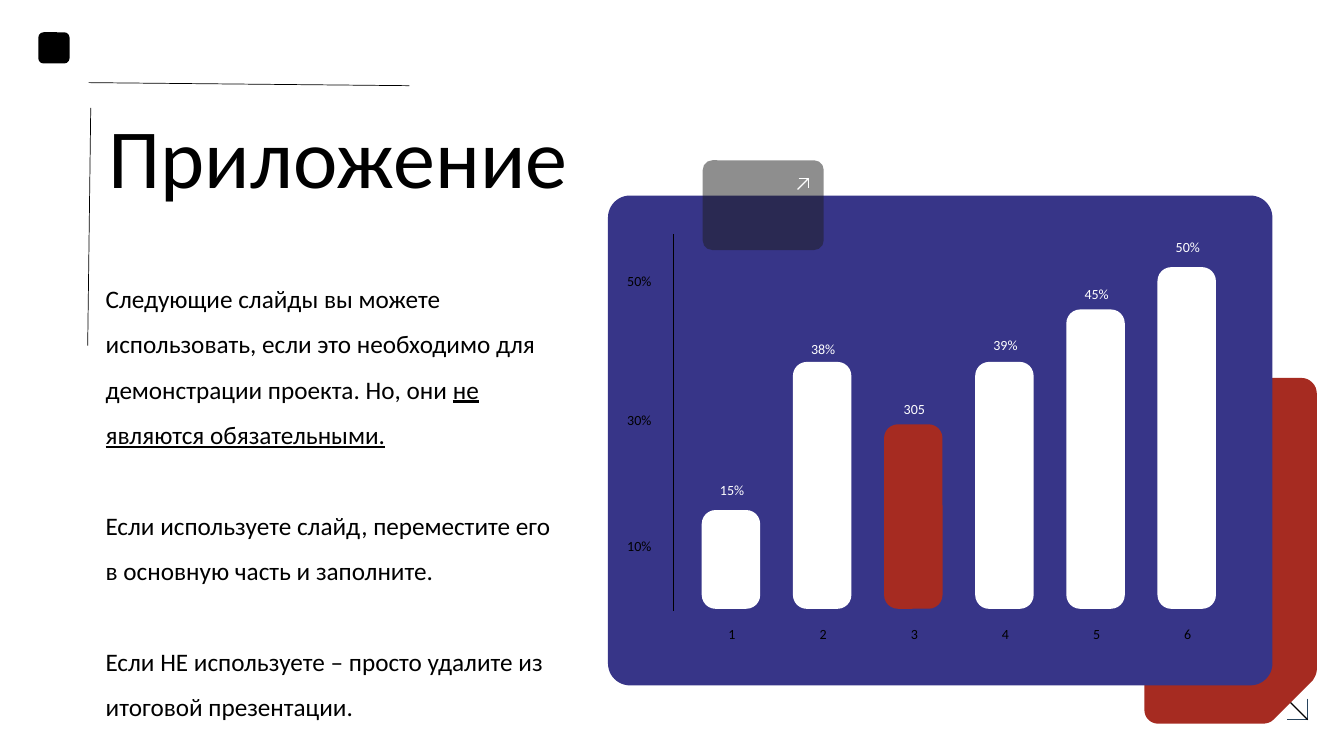
from lxml import etree
from pptx import Presentation
from pptx import util as u
from pptx.dml.color import RGBColor
from pptx.enum import shapes, text
from pptx.oxml.ns import qn

CELL = 0.1  # inches: the slide is a grid of 133.3 columns by 75 rows
BLACK, WHITE, RED, BLUE = "000000", "FFFFFF", "A62B21", "373588"


def grid(*cells):
    return [u.Inches(cell * CELL) for cell in cells]


def rgb(value):
    return RGBColor.from_string(value)


def flatten(outline, steps=8):
    """Turn (x, y) points and six-number cubic curves into plain points."""
    points = []
    for part in outline:
        if len(part) == 2:
            points.append(part)
            continue
        knots = [points[-1], part[:2], part[2:4], part[4:]]
        for step in range(1, steps + 1):
            t = step / steps
            weights = ((1 - t) ** 3, 3 * t * (1 - t) ** 2, 3 * t * t * (1 - t), t ** 3)
            points.append(tuple(sum(w * knot[axis] for w, knot in zip(weights, knots))
                                for axis in (0, 1)))
    return points


class Board:
    """The current slide together with its style; lengths are grid cells."""

    font = "Calibri"

    def __init__(self, slide):
        self.items = slide.shapes

    def paint(self, shape, fill=None, line=None, width=1):
        shape.shadow.inherit = False
        if fill:
            shape.fill.solid()
            shape.fill.fore_color.rgb = rgb(fill)
        else:
            shape.fill.background()
        if line:
            shape.line.color.rgb = rgb(line)
            shape.line.width = u.Pt(width)
        else:
            shape.line.fill.background()

    def card(self, left, top, width, height, fill, corner, opacity=None):
        card = self.items.add_shape(shapes.MSO_SHAPE.ROUNDED_RECTANGLE,
                                    *grid(left, top, width, height))
        card.adjustments[0] = corner
        self.paint(card, fill)
        if opacity is not None:
            tint = card.fill._xPr.find(qn("a:solidFill"))[0]
            etree.SubElement(tint, qn("a:alpha"), val=str(opacity * 1000))

    def outline(self, parts, close=False, **colours):
        start, *rest = [grid(*point) for point in flatten(parts)]
        builder = self.items.build_freeform(*start)
        builder.add_line_segments(rest, close=close)
        self.paint(builder.convert_to_shape(), **colours)

    def rule(self, start, end, colour=BLACK, width=0.5):
        rule = self.items.add_connector(shapes.MSO_CONNECTOR.STRAIGHT,
                                        *grid(*start, *end))
        rule.line.color.rgb = rgb(colour)
        rule.line.width = u.Pt(width)
        etree.SubElement(rule._element.spPr, qn("a:effectLst"))

    def arrow(self, tail, tip, head, head_colour, tail_colour):
        self.outline(head, line=head_colour)
        self.rule(tail, tip, tail_colour, 1)

    def words(self, box, paragraphs, size, colour=BLACK, anchor="TOP", **formats):
        """Each paragraph is a list of (wording, underlined) runs."""
        frame = self.items.add_textbox(*grid(*box)).text_frame
        frame.word_wrap = True
        frame.vertical_anchor = getattr(text.MSO_ANCHOR, anchor)
        for number, runs in enumerate(paragraphs):
            paragraph = frame.add_paragraph() if number else frame.paragraphs[0]
            for name, value in formats.items():
                setattr(paragraph, name, value)
            for wording, underlined in runs:
                run = paragraph.add_run()
                run.text = wording
                style = {"name": self.font, "size": u.Pt(size), "underline": underlined}
                for name, value in style.items():
                    setattr(run.font, name, value)
                run.font.color.rgb = rgb(colour)

    def label(self, wording, left, top, width, colour):
        self.words((left, top, width, 2.9), [[(wording, False)]], 10, colour,
                   alignment=text.PP_ALIGN.CENTER)


def draw_texts(board):
    board.words((9.8, 0, 66.6, 30.7), [[("Приложение", False)]], 60, anchor="MIDDLE")
    board.rule((9, 10.7), (8.7, 34.3))
    board.rule((8.8, 8.2), (40.6, 8.5))
    board.card(3.8, 3.2, 3.1, 3.1, BLACK, 0.17)
    board.words((9.5, 26.1, 47.5, 33.5), [
        [("Следующие слайды вы можете использовать, если это необходимо для "
          "демонстрации проекта. Но, они ", False),
         ("не являются обязательными.", True)],
        [("Если используете слайд, переместите его в основную часть и заполните.", False)],
        [("Если НЕ используете – просто удалите из итоговой презентации.", False)],
    ], 18, line_spacing=1.5, space_before=u.Pt(32.5))


def draw_panel(board):
    board.arrow((127.3, 69), (129.7, 71.4),
                [(129.7, 69.3), (129.7, 71.4), (127.6, 71.4)], "28445D", BLACK)
    board.outline([
        (130.6, 39), (130.6, 66.5), (130.6, 66.8, 130.4, 67.2, 130.2, 67.5),
        (126.3, 71.4), (126, 71.7, 125.6, 71.8, 125.2, 71.8),
        (114.9, 71.8), (114.1, 71.8, 113.5, 71.2, 113.5, 70.4),
        (113.5, 42.9), (113.5, 42.5, 113.6, 42.1, 113.9, 41.8),
        (117.8, 37.9), (118.1, 37.7, 118.4, 37.5, 118.8, 37.5),
        (129.1, 37.5), (129.9, 37.5, 130.6, 38.2, 130.6, 39),
    ], close=True, fill=RED)
    board.card(60.3, 19.4, 65.9, 48.6, BLUE, 0.045)
    board.card(69.7, 15.9, 12, 8.9, "1E1E1E", 0.107, opacity=50)
    board.arrow((79.1, 18.8), (80.2, 17.7),
                [(79.2, 17.7), (80.2, 17.7), (80.2, 18.7)], WHITE, WHITE)


def draw_bars(board):
    first, pitch, width, base = 69.6, 9.04, 5.8, 60.4
    bars = [("15%", 50.6, 47.3), ("38%", 35.9, 33.3), ("305", 42.1, 39.2),
            ("39%", 35.9, 32.9), ("45%", 30.7, 27.8), ("50%", 26.5, 23.2)]
    for number, (share, top, share_top) in enumerate(bars, 1):
        left = first + (number - 1) * pitch
        board.card(left, top, width, base - top, RED if number == 3 else WHITE, 0.237)
        board.label(str(number), left + 0.1, 61.6, width, BLACK)
        board.label(share, left + 0.1, share_top, width, WHITE)
    for mark, top in (("10%", 52.8), ("30%", 40.3), ("50%", 26.5)):
        board.label(mark, 60.4, top, 6, BLACK)
    board.rule((66.8, 23.2), (66.8, 60.6))


def main():
    deck = Presentation()
    deck.slide_width, deck.slide_height = u.Inches(13.33), u.Inches(7.5)
    board = Board(deck.slides.add_slide(deck.slide_layouts[6]))
    draw_texts(board)
    draw_panel(board)
    draw_bars(board)
    deck.save("out.pptx")


if __name__ == "__main__":
    main()
